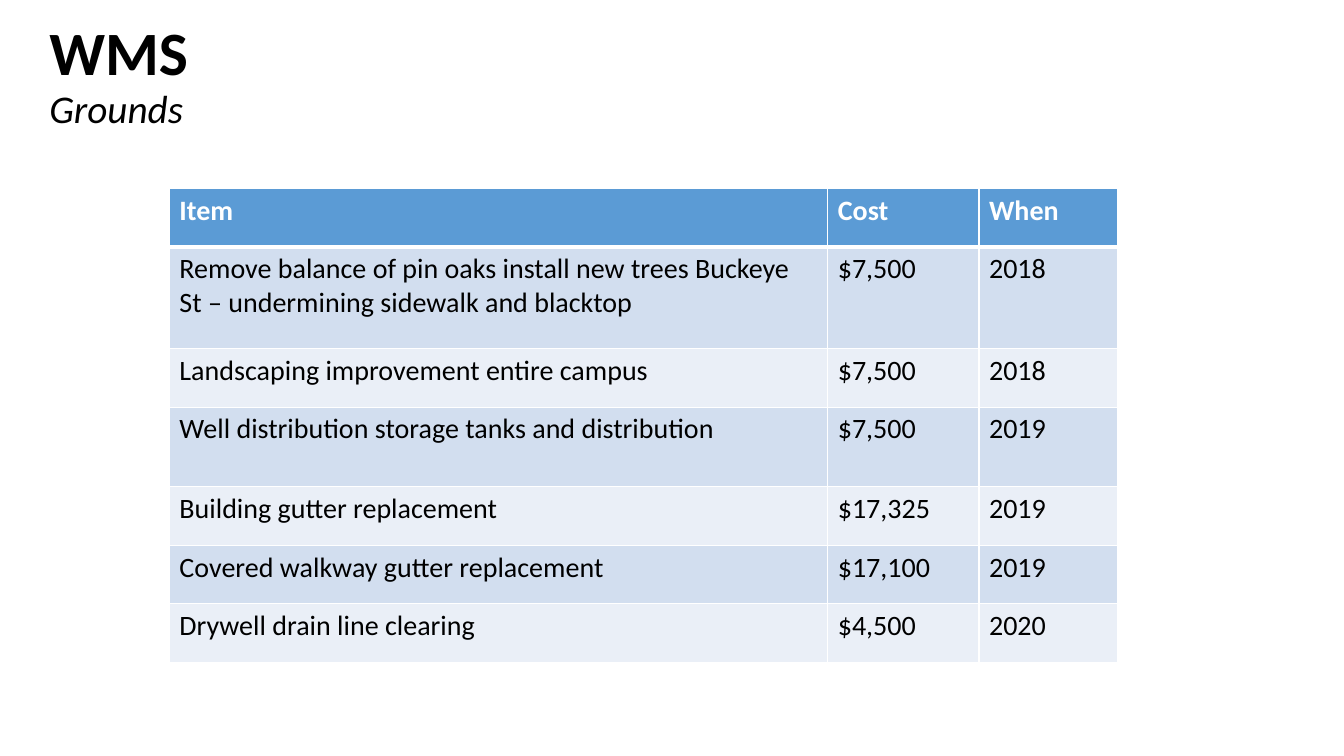
from dataclasses import dataclass

from lxml.etree import SubElement
from pptx import Presentation
from pptx.dml.color import RGBColor
from pptx.enum.text import MSO_VERTICAL_ANCHOR as Anchor
from pptx.oxml.ns import qn
from pptx.slide import Slide
from pptx.table import _Cell as Cell
from pptx.text.text import _Paragraph as Paragraph
from pptx.util import Emu, Pt

PX = 9144
FONT = "Calibri"
BLACK, WHITE = "000000", "FFFFFF"
HEADER_FILL = "5B9BD5"
BAND_FILLS = ("D2DEEF", "EAEFF7")
COLUMN_WIDTHS = (653, 150, 137)
HEADER_HEIGHT = 58
THIN, THICK = 1, 3


@dataclass(frozen=True)
class Expense:
    """One planned grounds expense and the height of its row."""

    item: str
    cost: str
    year: str
    height: int = 58


EXPENSES = (
    Expense(
        "Remove balance of pin oaks install new trees Buckeye St – undermining sidewalk and blacktop",
        "$7,500", "2018", 101,
    ),
    Expense("Landscaping improvement entire campus", "$7,500", "2018"),
    Expense("Well distribution storage tanks and distribution", "$7,500", "2019", 79),
    Expense("Building gutter replacement", "$17,325", "2019"),
    Expense("Covered walkway gutter replacement", "$17,100", "2019"),
    Expense("Drywell drain line clearing", "$4,500", "2020"),
)


def px(length: int) -> Emu:
    """Turn px into EMU."""
    return Emu(length * PX)


def rgb(value: str) -> RGBColor:
    """Turn a hex string into a colour."""
    return RGBColor.from_string(value)


def add_span(para: Paragraph, text: str, size: int, colour: str = BLACK,
             bold: bool = False, italic: bool = False) -> None:
    """Add one formatted run to a paragraph."""
    span = para.add_run()
    span.text = text
    span.font.name = FONT
    span.font.size = Pt(size)
    span.font.bold = bold
    span.font.italic = italic
    span.font.color.rgb = rgb(colour)


def add_title(page: Slide) -> None:
    """Add the two-line heading."""
    box = page.shapes.add_textbox(px(39), px(0), px(1029), px(153))
    frame = box.text_frame
    frame.word_wrap = True
    frame.vertical_anchor = Anchor.MIDDLE
    para = frame.paragraphs[0]
    para.line_spacing = 0.9
    add_span(para, "WMS", 44, bold=True)
    para.add_line_break()
    add_span(para, "Grounds", 28, italic=True)


def set_borders(cell: Cell, top: int, bottom: int) -> None:
    """Draw white borders around a cell."""
    properties = cell._tc.get_or_add_tcPr()
    for side, width in (("L", THIN), ("R", THIN), ("T", top), ("B", bottom)):
        line = SubElement(properties, qn(f"a:ln{side}"), w=str(Pt(width)))
        fill = SubElement(line, qn("a:solidFill"))
        SubElement(fill, qn("a:srgbClr"), val=WHITE)


def add_expense_table(page: Slide) -> None:
    """Add the banded table of expenses."""
    rows = [("Item", "Cost", "When")] + [(e.item, e.cost, e.year) for e in EXPENSES]
    heights = [HEADER_HEIGHT] + [e.height for e in EXPENSES]
    frame = page.shapes.add_table(
        len(rows), len(COLUMN_WIDTHS), px(168), px(187),
        px(sum(COLUMN_WIDTHS)), px(sum(heights)),
    )
    table = frame.table
    table.horz_banding = False
    for column, width in zip(table.columns, COLUMN_WIDTHS):
        column.width = px(width)
    for index, (texts, height) in enumerate(zip(rows, heights)):
        header = index == 0
        table.rows[index].height = px(height)
        for cell, text in zip(table.rows[index].cells, texts):
            set_borders(cell, THICK if index == 1 else THIN, THICK if header else THIN)
            cell.fill.solid()
            cell.fill.fore_color.rgb = rgb(HEADER_FILL if header else BAND_FILLS[(index - 1) % 2])
            add_span(cell.text_frame.paragraphs[0], text, 20,
                     WHITE if header else BLACK, bold=header)


def main() -> None:
    """Build and save the slide."""
    deck = Presentation()
    deck.slide_width, deck.slide_height = px(1333), px(750)
    page = deck.slides.add_slide(deck.slide_layouts[6])
    add_title(page)
    add_expense_table(page)
    deck.save("out.pptx")


if __name__ == "__main__":
    main()
